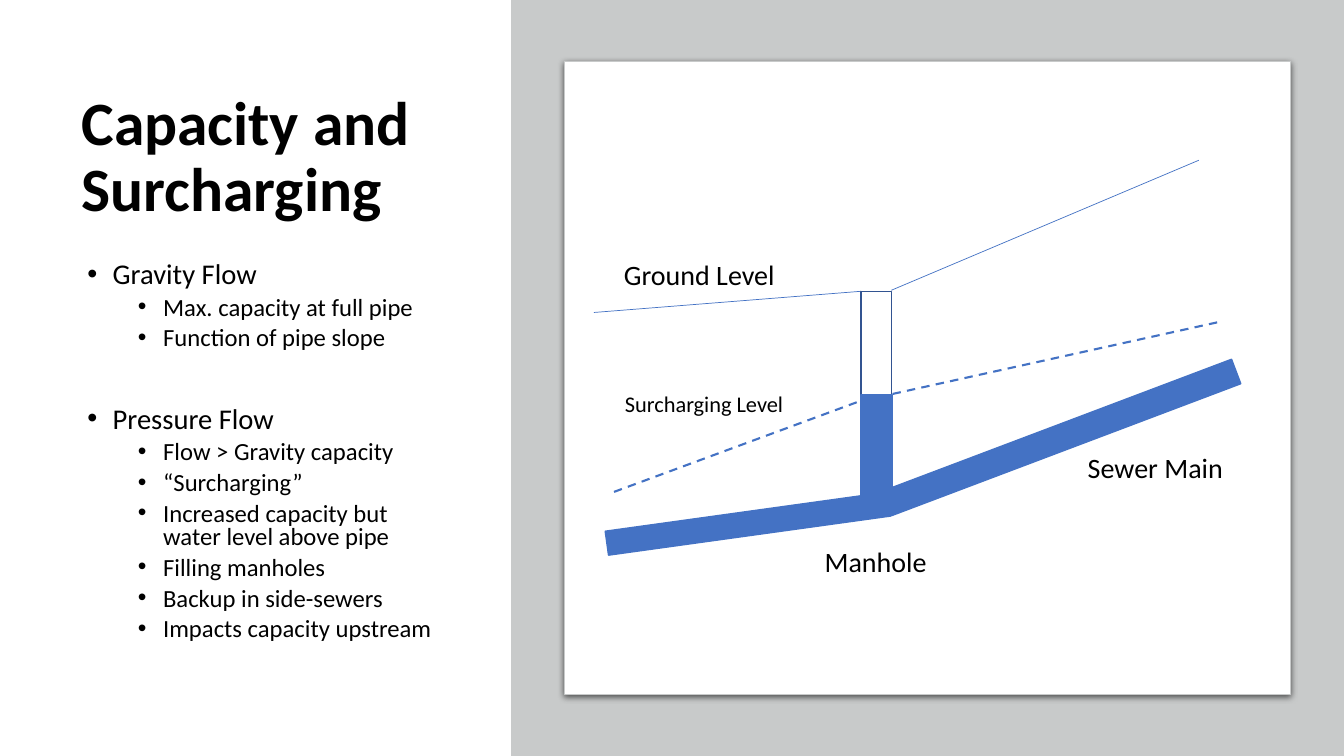
from dataclasses import dataclass

from lxml import etree
from pptx import Presentation
from pptx import util as u
from pptx.dml.color import RGBColor
from pptx.enum import dml, shapes, text
from pptx.oxml import parse_xml
from pptx.oxml.ns import nsdecls, qn

CELL = u.Inches(0.1)  # the slide is a grid of 133.3 by 75 cells


@dataclass(frozen=True)
class Theme:
    font: str = "Calibri"
    ink: str = "000000"
    paper: str = "FFFFFF"
    backdrop: str = "C8CACA"
    water: str = "4472C4"
    shaft: str = "325491"
    title: float = 44
    topic: float = 20.4
    point: float = 17.6
    label: float = 20
    small_label: float = 16


@dataclass(frozen=True)
class Box:
    """An area in grid cells."""
    left: float
    top: float
    width: float
    height: float

    def inner(self, left, top, width, height):
        return Box(self.left + left, self.top + top, width, height)

    def emu(self):
        return [cells(n) for n in (self.left, self.top, self.width, self.height)]


THEME = Theme()
TOPICS = [
    ("Gravity Flow", 10, ["Max. capacity at full pipe", "Function of pipe slope"]),
    ("Pressure Flow", 40, [
        "Flow > Gravity capacity",
        "“Surcharging”",
        "Increased capacity but water level above pipe",
        "Filling manholes",
        "Backup in side-sewers",
        "Impacts capacity upstream",
    ]),
]


def cells(count):
    return round(count * CELL)


def rgb(colour):
    return RGBColor.from_string(colour)


def add_text_box(slide, box):
    frame = slide.shapes.add_textbox(*box.emu()).text_frame
    frame.word_wrap = True
    return frame


def write(paragraph, words, size, spacing, bold=False):
    paragraph.text = words
    paragraph.line_spacing = spacing
    font = paragraph.runs[0].font
    font.name, font.size, font.bold = THEME.font, u.Pt(size), bold
    font.color.rgb = rgb(THEME.ink)


def add_bullet(paragraph, indent):
    props = paragraph._p.get_or_add_pPr()
    props.set("marL", str(u.Inches(indent)))
    props.set("indent", str(u.Inches(-0.25)))
    etree.SubElement(props, qn("a:buFont")).set("typeface", "Arial")
    etree.SubElement(props, qn("a:buChar")).set("char", "•")


def add_block(slide, box, fill=None, line=None, width=1, turn=0,
              kind=shapes.MSO_SHAPE.RECTANGLE):
    block = slide.shapes.add_shape(kind, *box.emu())
    block.shadow.inherit = False
    block.rotation = turn
    if fill:
        block.fill.solid()
        block.fill.fore_color.rgb = rgb(fill)
    else:
        block.fill.background()
    if line:
        block.line.color.rgb = rgb(line)
        block.line.width = u.Pt(width)
    else:
        block.line.fill.background()
    return block


def add_level(slide, box, start, end, width, dashed=False):
    """Draw a level line between two points measured from the box's corner."""
    ends = [cells(edge + offset) for point in (start, end)
            for edge, offset in zip((box.left, box.top), point)]
    level = slide.shapes.add_connector(shapes.MSO_CONNECTOR.STRAIGHT, *ends)
    level.line.color.rgb = rgb(THEME.water)
    level.line.width = u.Pt(width)
    if dashed:
        level.line.dash_style = dml.MSO_LINE.DASH
    etree.SubElement(level._element.spPr, qn("a:effectLst"))


def add_label(slide, box, words, size=THEME.label):
    paragraph = add_text_box(slide, box).paragraphs[0]
    write(paragraph, words, size, 0.9)
    paragraph.space_after = u.Pt(6)


def add_title(slide, box):
    frame = add_text_box(slide, box)
    frame.vertical_anchor = text.MSO_ANCHOR.MIDDLE
    write(frame.paragraphs[0], "Capacity and Surcharging", THEME.title, 0.9, bold=True)


def add_topics(slide, box):
    frame = add_text_box(slide, box)
    rows = []
    for topic, gap, points in TOPICS:
        rows.append((topic, 0, THEME.topic, gap, 0.31))
        rows += [(point, 1, THEME.point, 5, 0.81) for point in points]
    for number, (words, level, size, gap, indent) in enumerate(rows):
        paragraph = frame.add_paragraph() if number else frame.paragraphs[0]
        write(paragraph, words, size, 0.8)
        paragraph.level = level
        paragraph.space_before = u.Pt(gap)
        add_bullet(paragraph, indent)


def add_card(slide, box):
    card = add_block(slide, box, THEME.paper, THEME.backdrop, 0.75,
                     kind=shapes.MSO_SHAPE.ROUNDED_RECTANGLE)
    card.adjustments[0] = 0
    effects = card._element.spPr.find(qn("a:effectLst"))
    effects.append(parse_xml(
        f'<a:outerShdw {nsdecls("a")} blurRad="{u.Pt(4.5)}" dist="{u.Pt(1.5)}" '
        'dir="5400000" algn="t" rotWithShape="0">'
        '<a:srgbClr val="000000"><a:alpha val="63000"/></a:srgbClr></a:outerShdw>'))


def add_sewer_section(slide, box):
    add_card(slide, box)

    ground_left, ground_right = ((2.9, 24.9), (29.4, 22.8)), ((32.4, 22.7), (62.9, 9.8))
    surcharge_left, surcharge_right = ((4.9, 42.7), (30.9, 33.1)), ((31.1, 33.3), (65.1, 25.8))
    for ends in (ground_left, ground_right):
        add_level(slide, box, *ends, 0.5)
    add_level(slide, box, *surcharge_left, 1.5, dashed=True)

    add_block(slide, box.inner(29.4, 22.8, 3, 22), line=THEME.shaft)
    manhole_water = box.inner(29.4, 33.1, 3.1, 11.8)
    lower_main = box.inner(17, 31.7, 2.4, 28.3)
    upper_main = box.inner(48, 18.8, 2.6, 37)
    for part, turn in ((manhole_water, 0), (lower_main, 82.1), (upper_main, 69.3)):
        add_block(slide, part, THEME.water, THEME.water, turn=turn)
    add_level(slide, box, *surcharge_right, 1.5, dashed=True)

    add_label(slide, box.inner(4.9, 19.3, 18.3, 4), "Ground Level")
    add_label(slide, box.inner(50.9, 38.5, 18.3, 4), "Sewer Main")
    add_label(slide, box.inner(5, 32.4, 20.2, 4), "Surcharging Level", THEME.small_label)
    add_label(slide, box.inner(24.8, 47.8, 12.7, 4), "Manhole")


def main():
    deck = Presentation()
    deck.slide_width, deck.slide_height = cells(133.3), cells(75)
    slide = deck.slides.add_slide(deck.slide_layouts[6])
    add_title(slide, Box(7.1, 6.9, 38.3, 17.7))
    add_topics(slide, Box(7.1, 25.6, 38.3, 42.4))
    add_block(slide, Box(50.7, 0, 82.6, 75), THEME.backdrop)
    add_sewer_section(slide, Box(56, 6.1, 72, 62.8))
    deck.save("out.pptx")


if __name__ == "__main__":
    main()
